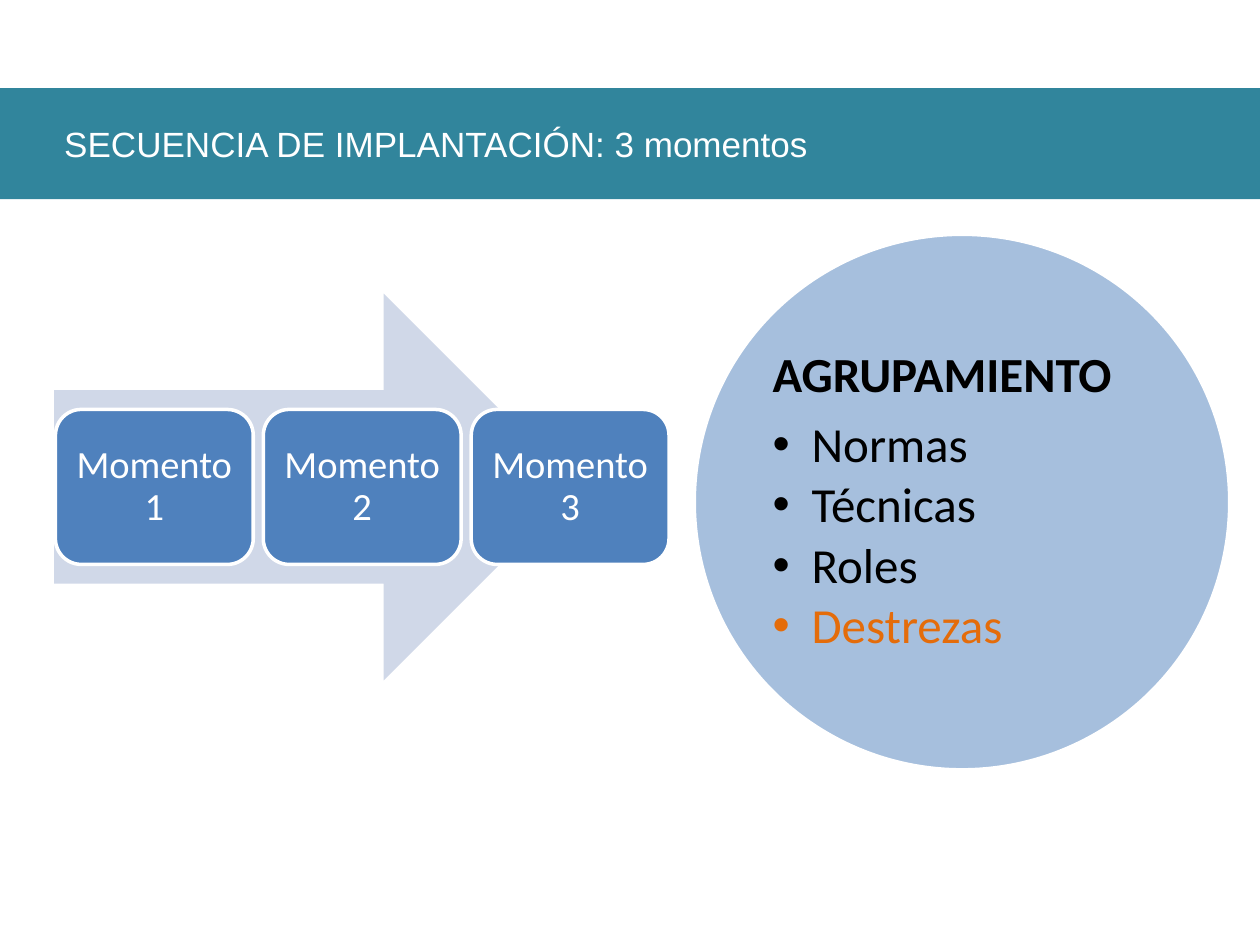
import dataclasses

import lxml.etree
import pptx
import pptx.dml.color
import pptx.enum.shapes
import pptx.enum.text
import pptx.oxml.ns
import pptx.util

Inches = pptx.util.Inches
Pt = pptx.util.Pt
Kind = pptx.enum.shapes.MSO_SHAPE
Align = pptx.enum.text.PP_ALIGN


@dataclasses.dataclass(frozen=True)
class Theme:
    """Hold the colours, fonts and type sizes of the slide."""

    teal: str = "31859C"
    pale: str = "D0D8E8"
    blue: str = "4F81BD"
    white: str = "FFFFFF"
    black: str = "000000"
    orange: str = "E46C0A"
    head: str = "Arial"
    body: str = "Calibri"
    small: int = 20
    mid: int = 22
    large: int = 28


THEME = Theme()


def tint(code):
    """Turn a hex code into a colour."""
    return pptx.dml.color.RGBColor.from_string(code)


def shape(slide, kind, box, fill, line=None, alpha=None, inset=(0, 0)):
    """Add a filled preset shape with its text centred in height."""
    item = slide.shapes.add_shape(kind, *map(Inches, box))
    item.shadow.inherit = False
    item.fill.solid()
    item.fill.fore_color.rgb = tint(fill)
    if alpha is not None:
        color = item._element.xpath("./p:spPr/a:solidFill/a:srgbClr")[0]
        node = lxml.etree.SubElement(color, pptx.oxml.ns.qn("a:alpha"))
        node.set("val", str(alpha * 1000))
    if line:
        item.line.color.rgb = tint(line)
        item.line.width = Pt(2)
    else:
        item.line.fill.background()
    frame = item.text_frame
    frame.word_wrap = True
    frame.vertical_anchor = pptx.enum.text.MSO_ANCHOR.MIDDLE
    frame.margin_left = frame.margin_right = Inches(inset[0])
    frame.margin_top = frame.margin_bottom = Inches(inset[1])
    return item


def write(frame, text, size, color, font=THEME.body, bold=False,
          align=Align.LEFT, left=0, bullet=False, lead=None, after=0):
    """Write one paragraph, filling the empty first one if there is one."""
    para = frame.paragraphs[0]
    if para.runs:
        para = frame.add_paragraph()
    props = para._p.get_or_add_pPr()
    props.set("marL", str(Inches(left)))
    props.set("indent", str(-Inches(left) if bullet else 0))
    if bullet:
        para.level = 1
        face = lxml.etree.SubElement(props, pptx.oxml.ns.qn("a:buFont"))
        face.set("typeface", THEME.head)
        mark = lxml.etree.SubElement(props, pptx.oxml.ns.qn("a:buChar"))
        mark.set("char", "•")
    para.alignment = align
    para.space_after = Pt(after * size)
    if lead:
        para.line_spacing = lead
    run = para.add_run()
    run.text = text
    run.font.name = font
    run.font.size = Pt(size)
    run.font.bold = bold
    run.font.color.rgb = tint(color)


def banner(slide):
    """Draw the title band."""
    band = shape(slide, Kind.RECTANGLE, (0, 0.7, 10, 0.88), THEME.teal,
                 inset=(0.12, 0))
    write(band.text_frame, "SECUENCIA DE IMPLANTACIÓN: 3 momentos",
          THEME.small, THEME.white, font=THEME.head, left=0.39)


def steps(slide):
    """Draw the arrow and the three moments on it."""
    shape(slide, Kind.RIGHT_ARROW, (0.43, 2.33, 4.15, 3.07), THEME.pale)
    for pos in range(3):
        card = shape(slide, Kind.ROUNDED_RECTANGLE,
                     (0.44 + 1.65 * pos, 3.25, 1.57, 1.23), THEME.blue,
                     line=THEME.white, inset=(0.09, 0.09))
        write(card.text_frame, f"Momento {pos + 1}", THEME.mid, THEME.white,
              align=Align.CENTER, lead=0.9, after=0.35)


def circle(slide):
    """Draw the circle with the grouping list."""
    disc = shape(slide, Kind.OVAL, (5.51, 1.86, 4.25, 4.25), THEME.blue,
                 line=THEME.white, alpha=50)
    frame = disc.text_frame
    write(frame, "AGRUPAMIENTO", THEME.large, THEME.black, bold=True,
          lead=0.9, after=0.35)
    items = dict.fromkeys(("Normas", "Técnicas", "Roles"), THEME.black)
    items["Destrezas"] = THEME.orange
    for text, color in items.items():
        write(frame, text, THEME.large, color, left=0.31, bullet=True,
              lead=0.9, after=0.15)


def main():
    """Build and save the slide."""
    deck = pptx.Presentation()
    deck.slide_width = Inches(10)
    deck.slide_height = Inches(7.5)
    slide = deck.slides.add_slide(deck.slide_layouts[6])
    banner(slide)
    steps(slide)
    circle(slide)
    deck.save("out.pptx")


if __name__ == "__main__":
    main()
